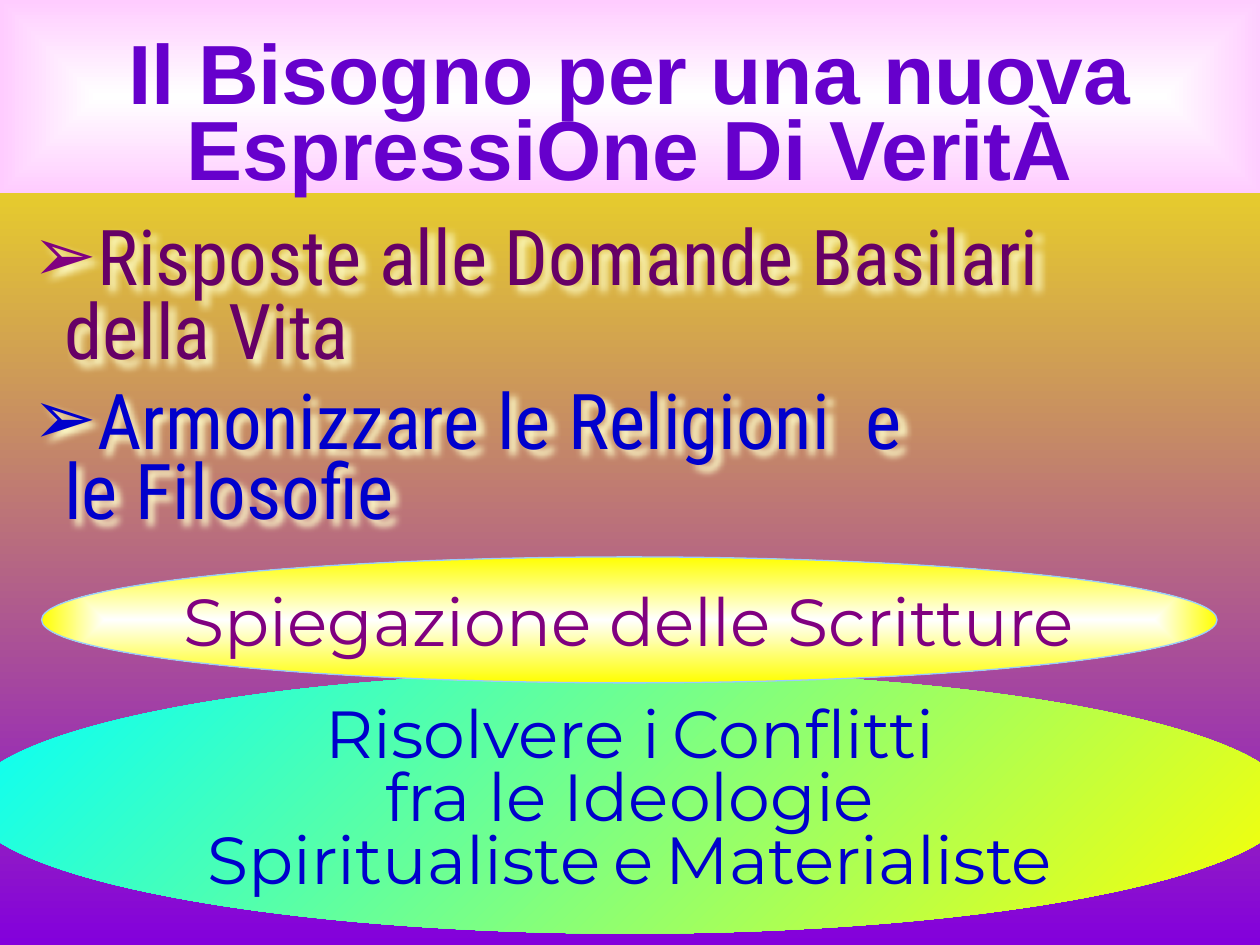
from lxml.etree import SubElement
from pptx import Presentation
from pptx.dml.color import RGBColor
from pptx.enum.shapes import MSO_SHAPE
from pptx.enum.text import MSO_ANCHOR, MSO_AUTO_SIZE, PP_ALIGN
from pptx.oxml import parse_xml
from pptx.oxml.ns import nsdecls, qn
from pptx.util import Inches, Pt

TITLE = "Il Bisogno per una nuova EspressiOne Di VeritÀ"
BULLETS = [  # text, box, text colour, bullet colour, line spacing
    ("Risposte alle Domande Basilari della Vita",
     (0.16, 1.75, 8.59, 1.27), "660066", "800080", 0.8),
    ("Armonizzare le Religioni  e le Filosofie",
     (0.16, 3.08, 7.17, 1.2), "0000CC", "0000CC", 0.75),
]
SCRIPTURES = "Spiegazione delle Scritture"
CONFLICTS = [  # runs of each line: text, letter spacing in points
    [("Risolvere ", 0), ("i ", -3), ("Conflitti", 0)],
    [("fra le Ideologie", 0)],
    [("Spiritualiste", 0), (" e ", -3), ("Materialiste", 0)],
]
TITLE_FONT = {"name": "Arial", "size": Pt(48), "bold": True}
BULLET_FONT = {"name": "Roboto Condensed", "size": Pt(44)}
OVAL_FONT = {"name": "Montserrat", "size": Pt(38)}


def rgb(value):
    return RGBColor.from_string(value)


def place(sp, box):
    sp.left, sp.top, sp.width, sp.height = map(Inches, box)


def set_gradient(fill, first, last, angle=0):
    """Two-stop gradient; the angle is clockwise."""
    fill.gradient()
    fill.gradient_angle = (360 - angle) % 360
    for stop, color in zip(fill.gradient_stops, (first, last)):
        stop.color.rgb = rgb(color)


def set_shape_path(sp):
    """Make the gradient run from the centre to the outline."""
    grad = sp._element.spPr.find(qn("a:gradFill"))
    grad.remove(grad.find(qn("a:lin")))
    path = SubElement(grad, qn("a:path"), path="shape")
    SubElement(path, qn("a:fillToRect"), dict.fromkeys("ltrb", "50000"))


def add_run(p, text, font, color, spacing=0):
    r = p.add_run()
    r.text = text
    for name, value in font.items():
        setattr(r.font, name, value)
    r.font.color.rgb = rgb(color)
    if spacing:
        r._r.get_or_add_rPr().set("spc", str(spacing * 100))


def set_frame(sp, **values):
    tf = sp.text_frame
    settings = {"word_wrap": True, "auto_size": MSO_AUTO_SIZE.NONE,
                "vertical_anchor": MSO_ANCHOR.MIDDLE, **values}
    for name, value in settings.items():
        setattr(tf, name, value)
    return tf


def add_bullet(p, color):
    pPr = p._p.get_or_add_pPr()
    pPr.set("marL", str(Inches(0.25)))
    pPr.set("indent", str(-Inches(0.25)))
    bu_clr = SubElement(pPr, qn("a:buClr"))
    SubElement(bu_clr, qn("a:srgbClr"), val=color)
    SubElement(pPr, qn("a:buChar"), char="➢")


def add_glow_shadow(sp):
    sp._element.spPr.append(parse_xml(
        f'<a:effectLst {nsdecls("a")}><a:outerShdw blurRad="50800" dist="50800" '
        'dir="2700000" algn="ctr"><a:srgbClr val="FFFFCC"/></a:outerShdw></a:effectLst>'))


def add_oval(shapes, box):
    sp = shapes.add_shape(MSO_SHAPE.OVAL, *map(Inches, box))
    sp.shadow.inherit = False
    return sp


def main():
    prs = Presentation()
    prs.slide_width, prs.slide_height = Inches(10), Inches(7.5)
    s = prs.slides.add_slide(prs.slide_layouts[3])
    set_gradient(s.background.fill, "FFFF00", "8300DC", 90)

    title, *bodies = s.placeholders
    place(title, (0, 0, 10, 1.53))
    set_gradient(title.fill, "FFFFFF", "FFCCFF")
    set_shape_path(title)
    p = set_frame(title, margin_top=Inches(0.37), margin_bottom=0).paragraphs[0]
    p.alignment, p.line_spacing = PP_ALIGN.CENTER, 0.75
    add_run(p, TITLE, TITLE_FONT, "6600CC")

    for sp, (text, box, color, bullet_color, spacing) in zip(bodies, BULLETS):
        place(sp, box)
        sp.fill.background()
        add_glow_shadow(sp)
        p = set_frame(sp).paragraphs[0]
        p.line_spacing, p.space_before = spacing, Pt(0)
        add_bullet(p, bullet_color)
        add_run(p, text, BULLET_FONT, color)

    group = s.shapes.add_group_shape()
    oval = add_oval(group.shapes, (-0.25, 5.33, 10.5, 2.08))
    set_gradient(oval.fill, "00FFFF", "FFFF00", 45)
    oval.line.fill.background()
    box = group.shapes.add_textbox(*map(Inches, (0.73, 5.58, 8.54, 1.63)))
    tf = set_frame(box, vertical_anchor=MSO_ANCHOR.TOP)
    for i, runs in enumerate(CONFLICTS):
        p = tf.add_paragraph() if i else tf.paragraphs[0]
        p.alignment, p.line_spacing = PP_ALIGN.CENTER, Pt(36)
        for text, spacing in runs:
            add_run(p, text, OVAL_FONT, "0000CC", spacing)

    oval = add_oval(s.shapes, (0.33, 4.42, 9.33, 1))
    set_gradient(oval.fill, "FFFFFF", "FFFF00")
    set_shape_path(oval)
    oval.line.color.rgb, oval.line.width = rgb("99CCFF"), Pt(0.75)
    p = set_frame(oval, word_wrap=False).paragraphs[0]
    p.alignment = PP_ALIGN.CENTER
    add_run(p, SCRIPTURES, OVAL_FONT, "800080")

    prs.save("out.pptx")


if __name__ == "__main__":
    main()
